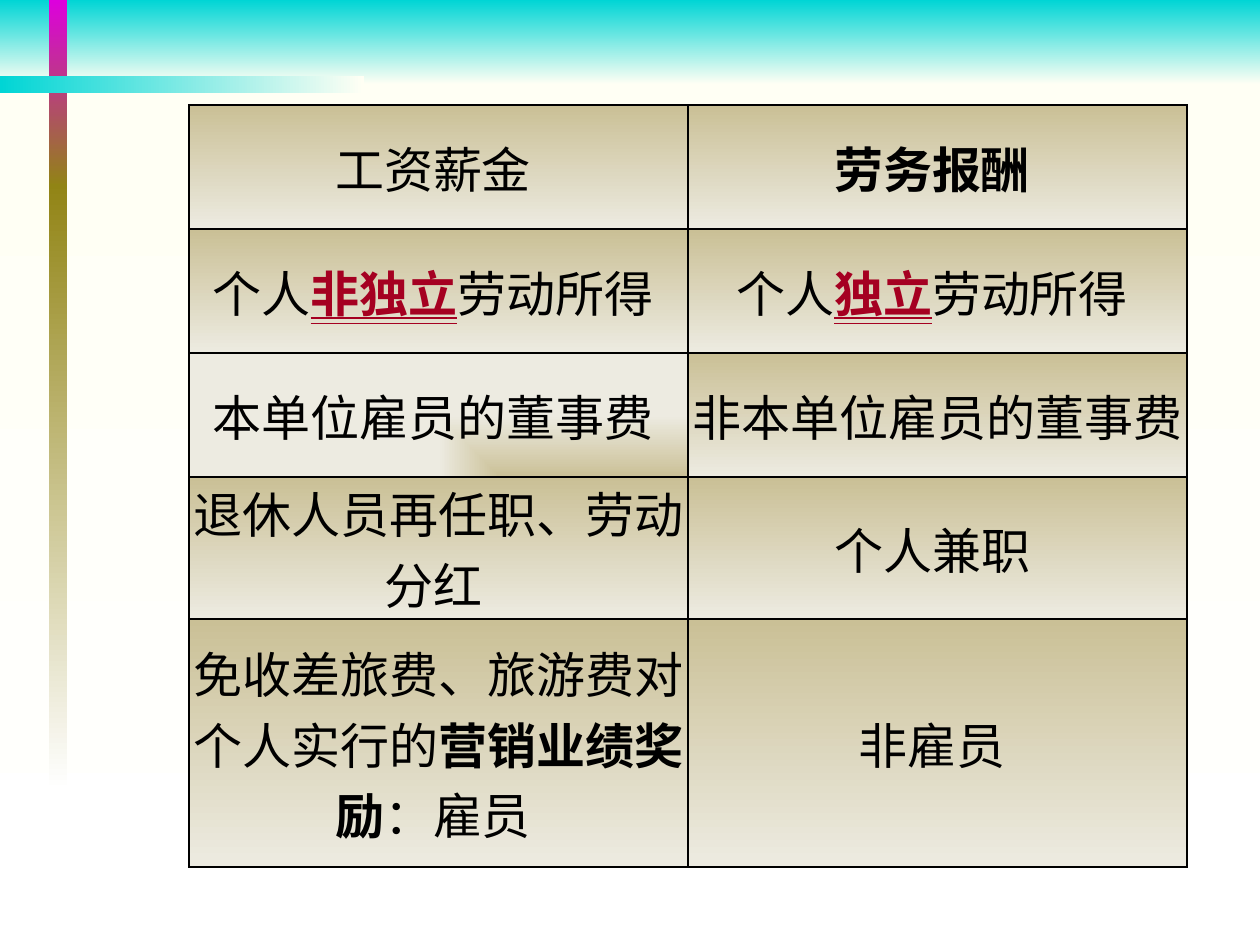
import lxml.etree
import pptx
import pptx.dml.color
import pptx.enum.shapes
import pptx.enum.text
import pptx.oxml
import pptx.oxml.ns
import pptx.util

Cm = pptx.util.Cm
RGBColor = pptx.dml.color.RGBColor
qn = pptx.oxml.ns.qn

CYAN = RGBColor(0x00, 0xD5, 0xD5)
IVORY = RGBColor(0xFF, 0xFF, 0xF4)
WHITE = RGBColor(0xFF, 0xFF, 0xFF)
MAGENTA = RGBColor(0xDD, 0x00, 0xDD)
OLIVE = RGBColor(0x91, 0x84, 0x15)
SAND = RGBColor(0xCA, 0xC0, 0x96)
PALE_SAND = RGBColor(0xED, 0xEB, 0xE1)
BLACK = RGBColor(0x00, 0x00, 0x00)
CRIMSON = RGBColor(0xA5, 0x00, 0x21)
FONT = "Noto Sans CJK SC"
DOWN, RIGHT = 270, 0


def paint_gradient(fill, start, end, angle):
    fill.gradient()
    fill.gradient_angle = angle
    for stop, color in zip(fill.gradient_stops, (start, end)):
        stop.color.rgb = color


def add_borders(cell, color, width):
    properties = cell._tc.get_or_add_tcPr()
    for side in ("lnL", "lnR", "lnT", "lnB"):
        line = lxml.etree.SubElement(properties, qn("a:" + side), w=str(int(width)))
        solid = lxml.etree.SubElement(line, qn("a:solidFill"))
        lxml.etree.SubElement(solid, qn("a:srgbClr"), val=str(color))


presentation = pptx.Presentation()
presentation.slide_width = Cm(25.4)
presentation.slide_height = Cm(19.05)
slide = presentation.slides.add_slide(presentation.slide_layouts[6])

# Background bands and the crossing bars
bands = [
    (0, 0, 25.4, 1.7, CYAN, IVORY, DOWN),
    (0, 1.7, 25.4, 17.35, IVORY, WHITE, DOWN),
    (0.99, 0, 0.36, 3.76, MAGENTA, OLIVE, DOWN),
    (0.99, 3.71, 0.36, 12.22, OLIVE, WHITE, DOWN),
    (0, 1.53, 7.34, 0.35, CYAN, IVORY, RIGHT),
]
for left, top, width, height, start, end, angle in bands:
    band = slide.shapes.add_shape(
        pptx.enum.shapes.MSO_SHAPE.RECTANGLE,
        Cm(left), Cm(top), Cm(width), Cm(height))
    band.shadow.inherit = False
    band.line.fill.background()
    paint_gradient(band.fill, start, end, angle)

# Comparison table: each cell is a list of (text, style) runs
rows = [
    ([("工资薪金 ", "")], [("劳务报酬 ", "bold")]),
    ([("个人", ""), ("非独立", "key"), ("劳动所得 ", "")],
     [("个人", ""), ("独立", "key"), ("劳动所得 ", "")]),
    ([("本单位雇员的董事费 ", "")], [("非本单位雇员的董事费 ", "")]),
    ([("退休人员再任职、劳动分红 ", "")], [("个人兼职 ", "")]),
    ([("免收差旅费、旅游费对个人实行的", ""), ("营销业绩奖励", "bold"), ("：雇员 ", "")],
     [("非雇员 ", "")]),
]
row_heights = [2.5, 2.5, 2.5, 2.5, 5]
table = slide.shapes.add_table(
    len(rows), 2, Cm(3.81), Cm(2.12), Cm(20.12), Cm(sum(row_heights))).table
for column in table.columns:
    column.width = Cm(10.06)

for row_index, (row, height) in enumerate(zip(rows, row_heights)):
    table.rows[row_index].height = Cm(height)
    for column_index, runs in enumerate(row):
        cell = table.cell(row_index, column_index)
        cell.margin_left = cell.margin_right = 0
        cell.margin_top = cell.margin_bottom = 0
        cell.vertical_anchor = pptx.enum.text.MSO_ANCHOR.MIDDLE
        add_borders(cell, BLACK, pptx.util.Pt(1))
        paint_gradient(cell.fill, SAND, PALE_SAND, DOWN)

        paragraph = cell.text_frame.paragraphs[0]
        paragraph.alignment = pptx.enum.text.PP_ALIGN.CENTER
        paragraph.font.size = pptx.util.Pt(28)
        paragraph.font.name = FONT
        paragraph.font.color.rgb = BLACK
        defaults = paragraph._p.pPr.find(qn("a:defRPr"))
        lxml.etree.SubElement(defaults, qn("a:ea"), typeface=FONT)
        for text, style in runs:
            run = paragraph.add_run()
            run.text = text
            run.font.bold = style in ("bold", "key")
            if style == "key":
                run.font.color.rgb = CRIMSON
                run.font.underline = pptx.enum.text.MSO_UNDERLINE.DOUBLE_LINE

# The second heading uses a serif Latin face
table.cell(0, 1).text_frame.paragraphs[0].font.name = "Times New Roman"

# The director's fee cell shades outwards from its lower right corner
gradient = table.cell(2, 0)._tc.tcPr.find(qn("a:gradFill"))
gradient.remove(gradient.find(qn("a:lin")))
corner = lxml.etree.SubElement(gradient, qn("a:path"), path="rect")
lxml.etree.SubElement(corner, qn("a:fillToRect"), l="100000", t="100000")

presentation.save("out.pptx")
